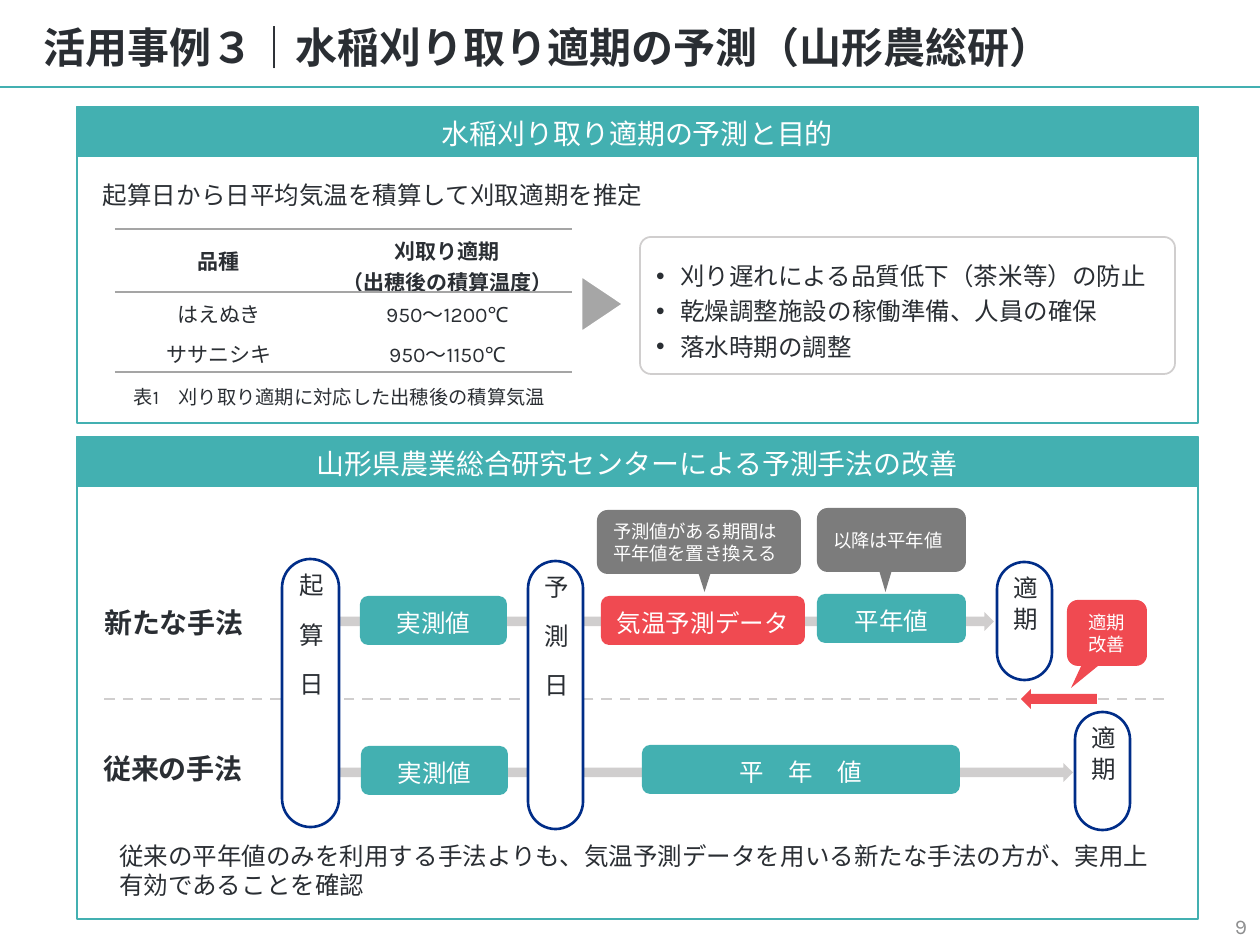
from lxml import etree
from pptx import Presentation
from pptx import util as u
from pptx.dml.color import RGBColor
from pptx.enum import dml, shapes, text
from pptx.oxml.ns import qn

INK = RGBColor(0x2A, 0x2E, 0x33)
WHITE = RGBColor(0xFF, 0xFF, 0xFF)
TEAL = RGBColor(0x43, 0xB0, 0xB1)
RED = RGBColor(0xF0, 0x4A, 0x51)
NAVY = RGBColor(0x00, 0x2D, 0x88)
CALLOUT = RGBColor(0x7C, 0x7C, 0x7C)
POINTER = RGBColor(0xA6, 0xA6, 0xA6)
RULE = RGBColor(0xA5, 0xA5, 0xA5)
PALE = RGBColor(0xD0, 0xCE, 0xCE)
PAGE_GREY = RGBColor(0x8E, 0x8F, 0x90)

KIND = shapes.MSO_SHAPE
LEFT, CENTER, RIGHT = text.PP_ALIGN.LEFT, text.PP_ALIGN.CENTER, text.PP_ALIGN.RIGHT
TOP, MIDDLE, BOTTOM = text.MSO_ANCHOR.TOP, text.MSO_ANCHOR.MIDDLE, text.MSO_ANCHOR.BOTTOM
INSETS = (13, 6, 13, 6)
CHIP_INSETS = (13, 10, 13, 6)


def px(count):
    return u.Emu(round(count * 914400 / 126))


def apply(target, values):
    for name, value in values.items():
        setattr(target, name, value)


def style_span(span, size, color, bold=False, font="Karla"):
    apply(span.font, {"size": u.Pt(size), "bold": bold, "name": font})
    span.font.color.rgb = color
    east = etree.SubElement(span.font._element, qn("a:ea"))
    east.set("typeface", "Noto Sans CJK JP")


def write(frame, lines, size, color=INK, bold=False, align=LEFT, anchor=TOP,
          insets=INSETS, spacing=None):
    """Fill a text frame with one paragraph for each line."""
    sides = ("margin_left", "margin_top", "margin_right", "margin_bottom")
    apply(frame, {"word_wrap": True, "vertical_anchor": anchor})
    apply(frame, {side: px(inset) for side, inset in zip(sides, insets)})
    for index, line in enumerate(lines):
        para = frame.add_paragraph() if index else frame.paragraphs[0]
        apply(para, {"alignment": align, "line_spacing": spacing})
        span = para.add_run()
        span.text = line
        style_span(span, size, color, bold)


def add_label(page, at, line, size, **formats):
    box = page.shapes.add_textbox(*map(px, at))
    write(box.text_frame, [line], size, **formats)


def add_figure(page, kind, at, fill=None, line=None, width=1, turn=0, round_to=None):
    figure = page.shapes.add_shape(kind, *map(px, at))
    figure.shadow.inherit = False
    figure.rotation = turn
    if round_to is not None:
        figure.adjustments[0] = round_to
    if fill is None:
        figure.fill.background()
    else:
        figure.fill.solid()
        figure.fill.fore_color.rgb = fill
    if line is None:
        figure.line.fill.background()
    else:
        figure.line.color.rgb = line
        figure.line.width = u.Pt(width)
    return figure


def add_rule(page, start, end, color, dash=None):
    rule = page.shapes.add_connector(shapes.MSO_CONNECTOR.STRAIGHT, *map(px, start + end))
    rule.line.color.rgb = color
    apply(rule.line, {"width": u.Pt(1.5), "dash_style": dash})
    etree.SubElement(rule._element.spPr, qn("a:effectLst"))


def add_chip(page, at, line, fill=TEAL):
    chip = add_figure(page, KIND.ROUNDED_RECTANGLE, at, fill)
    write(chip.text_frame, [line], 14, WHITE, align=CENTER, anchor=MIDDLE, insets=CHIP_INSETS)


def add_date_pill(page, at, line):
    pill = add_figure(page, KIND.ROUNDED_RECTANGLE, at, WHITE, NAVY, 1.5, round_to=0.5)
    write(pill.text_frame, [line], 14, align=CENTER, anchor=MIDDLE)
    pill.text_frame._txBody.bodyPr.set("vert", "eaVert")


def add_callout(page, at, line, tail, fill=CALLOUT, turn=180, align=LEFT):
    add_figure(page, KIND.ISOSCELES_TRIANGLE, tail, fill, turn=turn)
    body = add_figure(page, KIND.ROUNDED_RECTANGLE, at, fill)
    write(body.text_frame, [line], 10.5, WHITE, align=align, anchor=MIDDLE)


def add_panel(page, top, height, heading):
    header = add_figure(page, KIND.RECTANGLE, (77, top, 1121, 49), TEAL, TEAL, 0.75)
    write(header.text_frame, [heading], 16, WHITE, align=CENTER, insets=(20, 10, 20, 5))
    add_figure(page, KIND.RECTANGLE, (77, top, 1121, height), line=TEAL)
    return header


def set_border(cell, side, color=None):
    edge = etree.SubElement(cell._tc.get_or_add_tcPr(), qn("a:ln" + side))
    if color is None:
        etree.SubElement(edge, qn("a:noFill"))
    else:
        edge.set("w", str(u.Pt(1)))
        fill = etree.SubElement(edge, qn("a:solidFill"))
        etree.SubElement(fill, qn("a:srgbClr")).set("val", str(color))


def add_variety_table(page):
    rows = [
        (["品種"], ["刈取り適期", "（出穂後の積算温度）"]),
        (["はえぬき"], ["950～1200℃"]),
        (["ササニシキ"], ["950～1150℃"]),
    ]
    ruled_edges = {0, 1, len(rows)}
    holder = page.shapes.add_table(len(rows), 2, *map(px, (115, 229, 457, 145)))
    table = holder.table
    apply(table, {"first_row": False, "horz_banding": False})
    for column, width in zip(table.columns, (208, 249)):
        column.width = px(width)
    for index, (height, row) in enumerate(zip((47, 40, 40), rows)):
        table.rows[index].height = px(height)
        for cell, lines in zip(table.rows[index].cells, row):
            write(cell.text_frame, lines, 12, bold=index == 0, align=CENTER)
            cell.vertical_anchor = MIDDLE
            for side, edge in (("L", None), ("R", None), ("T", index), ("B", index + 1)):
                set_border(cell, side, RULE if edge in ruled_edges else None)
            cell.fill.background()
    holder.height = px(145)


def add_purpose_box(page):
    box = add_figure(page, KIND.ROUNDED_RECTANGLE, (640, 237, 535, 137), line=PALE,
                     round_to=0.08)
    lines = ["刈り遅れによる品質低下（茶米等）の防止", "乾燥調整施設の稼働準備、人員の確保",
             "落水時期の調整"]
    write(box.text_frame, lines, 14, insets=(13, 15, 13, 15), spacing=1.2)
    for para in box.text_frame.paragraphs:
        props = para._p.get_or_add_pPr()
        props.set("marL", str(px(24)))
        props.set("indent", str(-px(24)))
        etree.SubElement(props, qn("a:buFont")).set("typeface", "Arial")
        etree.SubElement(props, qn("a:buChar")).set("char", "•")


def add_timelines(page):
    add_rule(page, (1164, 699), (102, 699), PALE, dml.MSO_LINE.DASH)
    add_label(page, (80, 600, 188, 47), "新たな手法", 16, bold=True, align=CENTER)
    add_label(page, (79, 746, 188, 47), "従来の手法", 16, bold=True, align=CENTER)
    for at in ((329, 612, 665, 19), (334, 763, 739, 19)):
        add_figure(page, KIND.RIGHT_ARROW, at, PALE)

    add_callout(page, (597, 510, 204, 64), "予測値がある期間は平年値を置き換える",
                (692, 553, 25, 39))
    add_callout(page, (817, 508, 149, 64), "以降は平年値", (874, 553, 23, 39))
    add_callout(page, (1067, 600, 80, 66), "適期改善", (1074, 653, 18, 39),
                RED, 217.8, CENTER)

    add_chip(page, (360, 596, 147, 49), "実測値")
    add_chip(page, (361, 746, 147, 49), "実測値")
    add_chip(page, (601, 596, 204, 49), "気温予測データ", RED)
    add_chip(page, (817, 594, 149, 49), "平年値")
    add_chip(page, (642, 745, 318, 49), "平　年　値")

    add_date_pill(page, (282, 559, 57, 268), "起　算　日")
    add_date_pill(page, (528, 561, 55, 268), "予　測　日")
    add_date_pill(page, (997, 562, 55, 118), "適 期")
    add_date_pill(page, (1075, 712, 55, 118), "適 期")
    add_figure(page, KIND.LEFT_ARROW, (1021, 689, 76, 20), RED)


def main():
    deck = Presentation()
    apply(deck, {"slide_width": px(1260), "slide_height": px(945)})
    page = deck.slides.add_slide(deck.slide_layouts[6])

    add_rule(page, (0, 87), (1260, 87), TEAL)
    add_label(page, (0, 0, 1260, 86), "活用事例３｜水稲刈り取り適期の予測（山形農総研）", 24,
              bold=True, anchor=MIDDLE, insets=(44, 20, 13, 6), spacing=0.9)

    header = add_panel(page, 107, 316, "水稲刈り取り適期の予測")
    span = header.text_frame.paragraphs[0].add_run()
    span.text = "と目的"
    style_span(span, 16, WHITE, font="Noto Sans CJK JP")
    add_label(page, (90, 174, 577, 43), "起算日から日平均気温を積算して刈取適期を推定", 14)
    add_variety_table(page)
    add_label(page, (111, 379, 457, 37), "表1　刈り取り適期に対応した出穂後の積算気温", 11,
              align=CENTER)
    add_figure(page, KIND.ISOSCELES_TRIANGLE, (573, 282, 59, 44), POINTER, WHITE, 2, turn=90)
    add_purpose_box(page)

    add_panel(page, 437, 482, "山形県農業総合研究センターによる予測手法の改善")
    add_timelines(page)
    add_label(page, (106, 835, 1077, 72), "従来の平年値のみを利用する手法よりも、気温予測データを"
              "用いる新たな手法の方が、実用上有効であることを確認", 14)
    add_label(page, (976, 895, 284, 50), "9", 12, color=PAGE_GREY, align=RIGHT, anchor=BOTTOM)
    deck.save("out.pptx")


if __name__ == "__main__":
    main()
